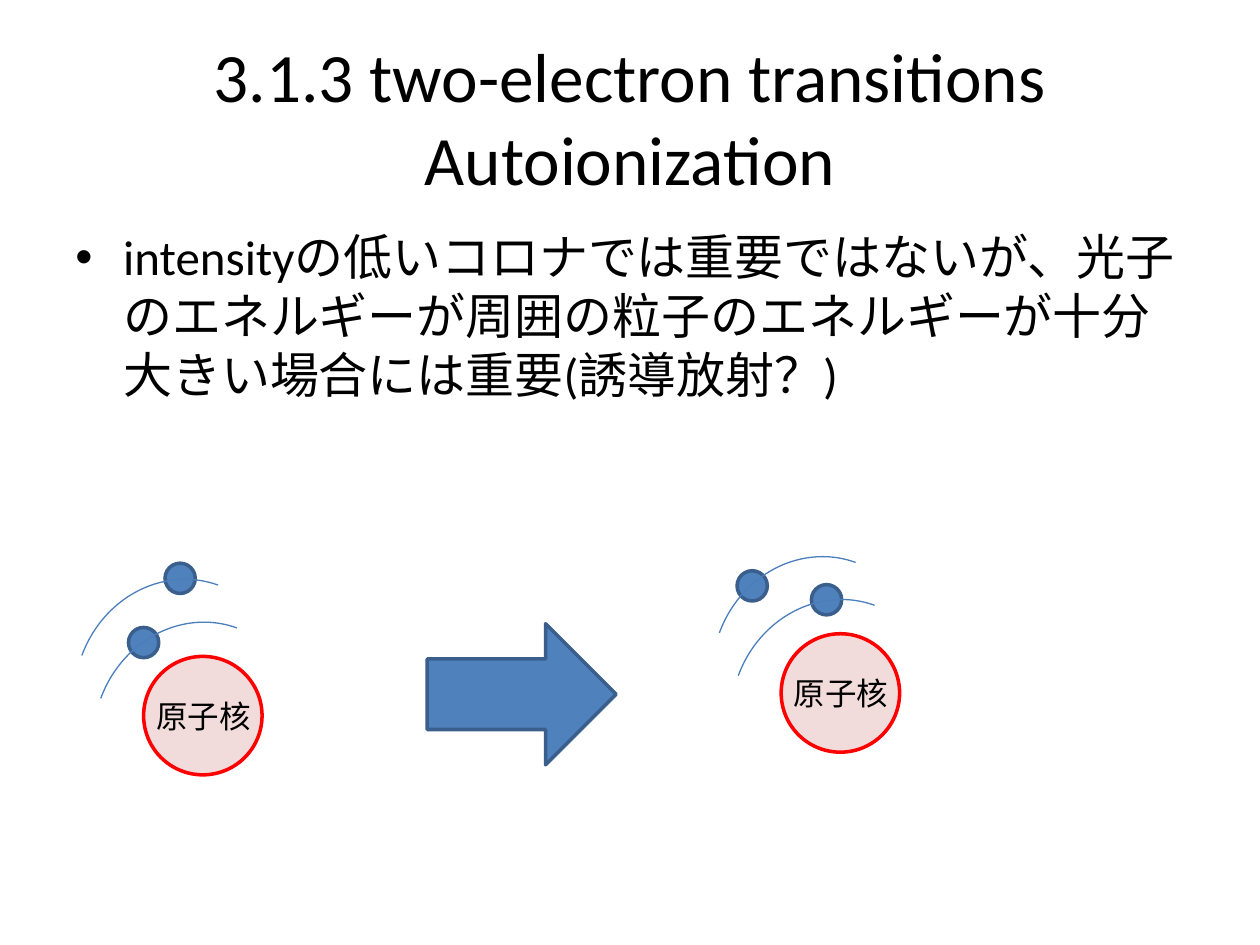
from dataclasses import dataclass

from lxml.etree import SubElement
from pptx import Presentation
from pptx.dml.color import RGBColor
from pptx.enum.shapes import MSO_SHAPE
from pptx.enum.text import MSO_ANCHOR, PP_ALIGN
from pptx.oxml.ns import qn
from pptx.util import Inches, Pt


@dataclass(frozen=True)
class Theme:
    font: str = "Calibri"
    text: str = "000000"
    blue: str = "4F81BD"
    blue_edge: str = "3A5F8C"
    orbit: str = "4B7EBC"
    nucleus: str = "F2DCDB"
    nucleus_edge: str = "FF0000"
    title_size: float = 39.6
    body_size: float = 28
    label_size: float = 18
    edge_width: float = 2
    orbit_width: float = 0.75


class SlideBuilder:
    def __init__(self, slide, theme):
        self.slide = slide
        self.theme = theme

    def text(self, words, left, top, width, height, size,
             align=PP_ALIGN.LEFT, anchor=MSO_ANCHOR.TOP):
        box = self.slide.shapes.add_textbox(
            Inches(left), Inches(top), Inches(width), Inches(height))
        frame = box.text_frame
        frame.word_wrap = True
        frame.vertical_anchor = anchor
        frame.text = words
        para = frame.paragraphs[0]
        para.alignment = align
        for span in para.runs:
            span.font.name = self.theme.font
            span.font.size = Pt(size)
            span.font.color.rgb = RGBColor.from_string(self.theme.text)
        return para

    def bullet(self, words, left, top, width, height, size, indent):
        para = self.text(words, left, top, width, height, size)
        para.space_before = Pt(size * 0.2)
        properties = para._p.get_or_add_pPr()
        properties.set("marL", str(Inches(indent)))
        properties.set("indent", str(-Inches(indent)))
        SubElement(properties, qn("a:buFont")).set("typeface", "Arial")
        SubElement(properties, qn("a:buChar")).set("char", "•")

    def shape(self, kind, left, top, width, height, fill, edge, edge_width):
        shape = self.slide.shapes.add_shape(
            kind, Inches(left), Inches(top), Inches(width), Inches(height))
        shape.shadow.inherit = False
        if fill:
            shape.fill.solid()
            shape.fill.fore_color.rgb = RGBColor.from_string(fill)
        else:
            shape.fill.background()
        shape.line.color.rgb = RGBColor.from_string(edge)
        shape.line.width = Pt(edge_width)
        return shape

    def nucleus(self, left, top):
        theme = self.theme
        self.shape(MSO_SHAPE.OVAL, left, top, 0.94, 0.94,
                   theme.nucleus, theme.nucleus_edge, theme.edge_width)
        self.text("原子核", left, top + 0.27, 1.21, 0.4, theme.label_size)

    def electron(self, left, top):
        self.shape(MSO_SHAPE.OVAL, left, top, 0.24, 0.24,
                   self.theme.blue, self.theme.blue_edge, self.theme.edge_width)

    def orbit(self, left, top):
        arc = self.shape(MSO_SHAPE.ARC, left, top, 1.79, 1.65,
                         None, self.theme.orbit, self.theme.orbit_width)
        arc.rotation = 290

    def atom(self, left, top, inner_electron, outer_electron):
        self.nucleus(left, top)
        self.electron(*inner_electron)
        self.orbit(left - 0.46, top - 0.21)
        self.electron(*outer_electron)
        self.orbit(left - 0.61, top - 0.55)

    def block_arrow(self, left, top, width, height):
        self.shape(MSO_SHAPE.RIGHT_ARROW, left, top, width, height,
                   self.theme.blue, self.theme.blue_edge, self.theme.edge_width)


def main():
    deck = Presentation()
    deck.slide_width, deck.slide_height = Inches(10), Inches(7.5)
    theme = Theme()
    builder = SlideBuilder(deck.slides.add_slide(deck.slide_layouts[6]), theme)

    # Title and explanation
    builder.text("3.1.3 two-electron transitions\vAutoionization",
                 0.5, 0.3, 9, 1.25, theme.title_size,
                 PP_ALIGN.CENTER, MSO_ANCHOR.MIDDLE)
    builder.bullet("intensityの低いコロナでは重要ではないが、光子のエネルギーが"
                   "周囲の粒子のエネルギーが十分大きい場合には重要(誘導放射？)",
                   0.5, 1.75, 9, 4.95, theme.body_size, indent=0.38)

    # Atom before and after the transition
    builder.atom(1.14, 5.21, inner_electron=(1.02, 4.98), outer_electron=(1.31, 4.47))
    builder.block_arrow(3.39, 4.95, 1.5, 1.12)
    builder.atom(6.2, 5.03, inner_electron=(6.44, 4.64), outer_electron=(5.85, 4.53))

    deck.save("out.pptx")


if __name__ == "__main__":
    main()
